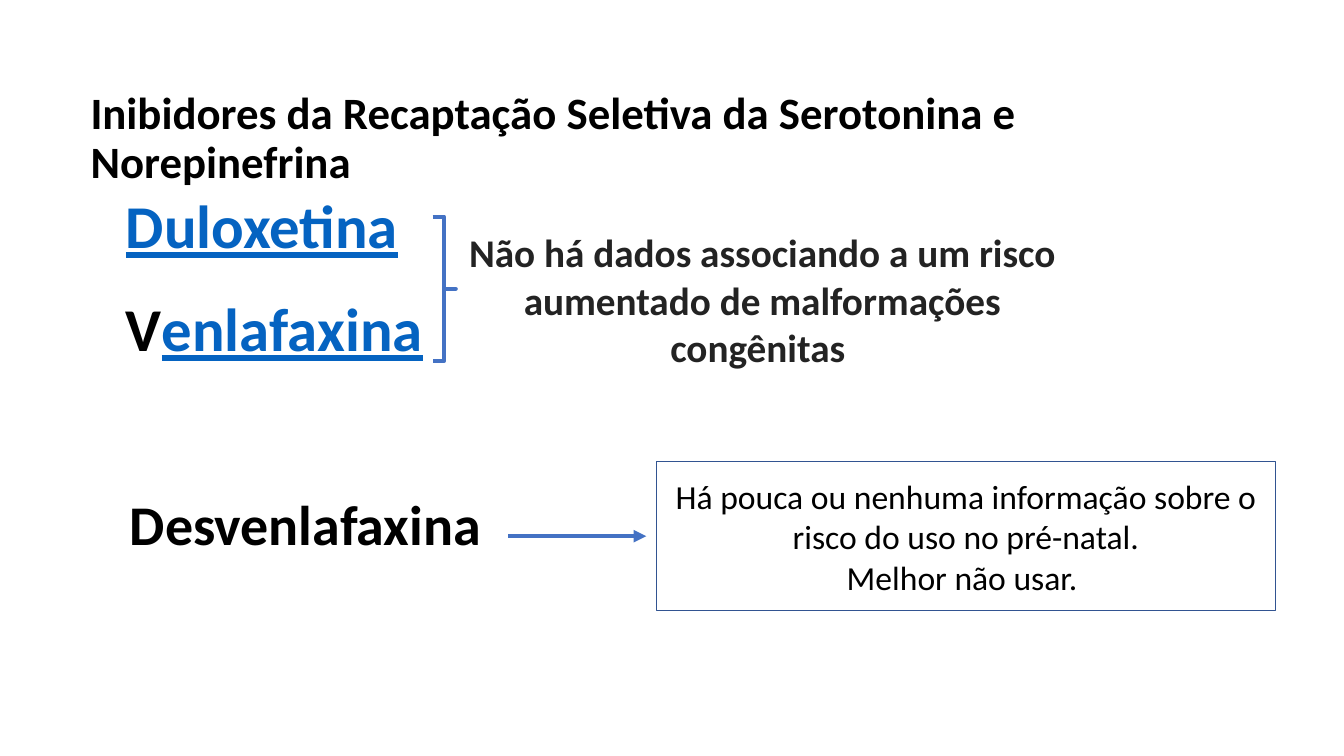
"""Build the slide on serotonin and norepinephrine reuptake inhibitors."""
import pptx
import pptx.util
import pptx.dml.color
import pptx.enum.shapes
import pptx.enum.text
import pptx.oxml
import pptx.oxml.ns

Inches = pptx.util.Inches
Pt = pptx.util.Pt
RGBColor = pptx.dml.color.RGBColor
SHAPES = pptx.enum.shapes.MSO_SHAPE
ANCHOR = pptx.enum.text.MSO_ANCHOR
ALIGN = pptx.enum.text.PP_ALIGN

BLACK = RGBColor(0x00, 0x00, 0x00)
WHITE = RGBColor(0xFF, 0xFF, 0xFF)
CHARCOAL = RGBColor(0x23, 0x23, 0x23)
LINK_BLUE = RGBColor(0x05, 0x63, 0xC1)
ACCENT_BLUE = RGBColor(0x44, 0x72, 0xC4)
BORDER_BLUE = RGBColor(0x32, 0x54, 0x91)


def write_text(shape, text, size, color, bold, anchor, align, line_spacing):
    """Fill a shape with evenly formatted paragraphs."""
    text_frame = shape.text_frame
    text_frame.text = text
    text_frame.word_wrap = True
    text_frame.vertical_anchor = anchor
    for paragraph in text_frame.paragraphs:
        paragraph.alignment = align
        paragraph.line_spacing = line_spacing
        for run in paragraph.runs:
            run.font.name = "Calibri"
            run.font.size = Pt(size)
            run.font.bold = bold
            run.font.color.rgb = color


presentation = pptx.Presentation()
presentation.slide_width = Inches(13.33)
presentation.slide_height = Inches(7.5)
slide = presentation.slides.add_slide(presentation.slide_layouts[6])
shapes = slide.shapes

title = shapes.add_textbox(Inches(0.8), Inches(0.16), Inches(11.73), Inches(2.45))
write_text(title, "Inibidores da Recaptação Seletiva da Serotonina e Norepinefrina",
           32, BLACK, True, ANCHOR.MIDDLE, ALIGN.LEFT, 0.9)

drugs = shapes.add_textbox(Inches(1.15), Inches(1.99), Inches(10.51), Inches(1.65))
write_text(drugs, "Duloxetina\nV", 43.4, BLACK, True, ANCHOR.BOTTOM, ALIGN.LEFT, 0.7)
duloxetine, venlafaxine = drugs.text_frame.paragraphs
venlafaxine.space_before = Pt(37)
venlafaxine_ending = venlafaxine.add_run()
venlafaxine_ending.text = "enlafaxina"
venlafaxine_ending.font.name = "Calibri"
venlafaxine_ending.font.size = Pt(43.4)
venlafaxine_ending.font.bold = True
for run in (duloxetine.runs[0], venlafaxine_ending):
    run.font.underline = True
    run.font.color.rgb = LINK_BLUE

desvenlafaxine = shapes.add_textbox(Inches(1.19), Inches(4.88), Inches(10.38), Inches(1.1))
write_text(desvenlafaxine, "Desvenlafaxina", 40, BLACK, True, ANCHOR.TOP, ALIGN.LEFT, 0.9)

bracket = shapes.add_shape(SHAPES.RIGHT_BRACE, Inches(4.29), Inches(2.15), Inches(0.23), Inches(1.43))
bracket.adjustments[0] = 0
bracket.adjustments[1] = 0.5
bracket.shadow.inherit = False
bracket.fill.solid()
bracket.fill.fore_color.rgb = WHITE
bracket.line.color.rgb = ACCENT_BLUE
bracket.line.width = Pt(3)

finding = shapes.add_textbox(Inches(4.36), Inches(2.07), Inches(6.4), Inches(1.8))
write_text(finding, "Não há dados associando a um risco aumentado de malformações congênitas ",
           28, CHARCOAL, True, ANCHOR.MIDDLE, ALIGN.CENTER, 1.0)

arrow = shapes.add_connector(pptx.enum.shapes.MSO_CONNECTOR.STRAIGHT,
                             Inches(5.04), Inches(5.32), Inches(6.41), Inches(5.32))
arrow.line.color.rgb = ACCENT_BLUE
arrow.line.width = Pt(3)
arrowhead = pptx.oxml.parse_xml(f'<a:tailEnd {pptx.oxml.ns.nsdecls("a")} type="triangle"/>')
arrow.line._get_or_add_ln().append(arrowhead)
no_effects = pptx.oxml.parse_xml(f'<a:effectLst {pptx.oxml.ns.nsdecls("a")}/>')
arrow._element.spPr.append(no_effects)

advice = shapes.add_shape(SHAPES.RECTANGLE, Inches(6.51), Inches(4.58), Inches(6.14), Inches(1.48))
advice.shadow.inherit = False
advice.fill.background()
advice.line.color.rgb = BORDER_BLUE
advice.line.width = Pt(1)
write_text(advice, "Há pouca ou nenhuma informação sobre o risco do uso no pré-natal.\nMelhor não usar. ",
           24, BLACK, False, ANCHOR.MIDDLE, ALIGN.CENTER, 1.0)

presentation.save("out.pptx")
